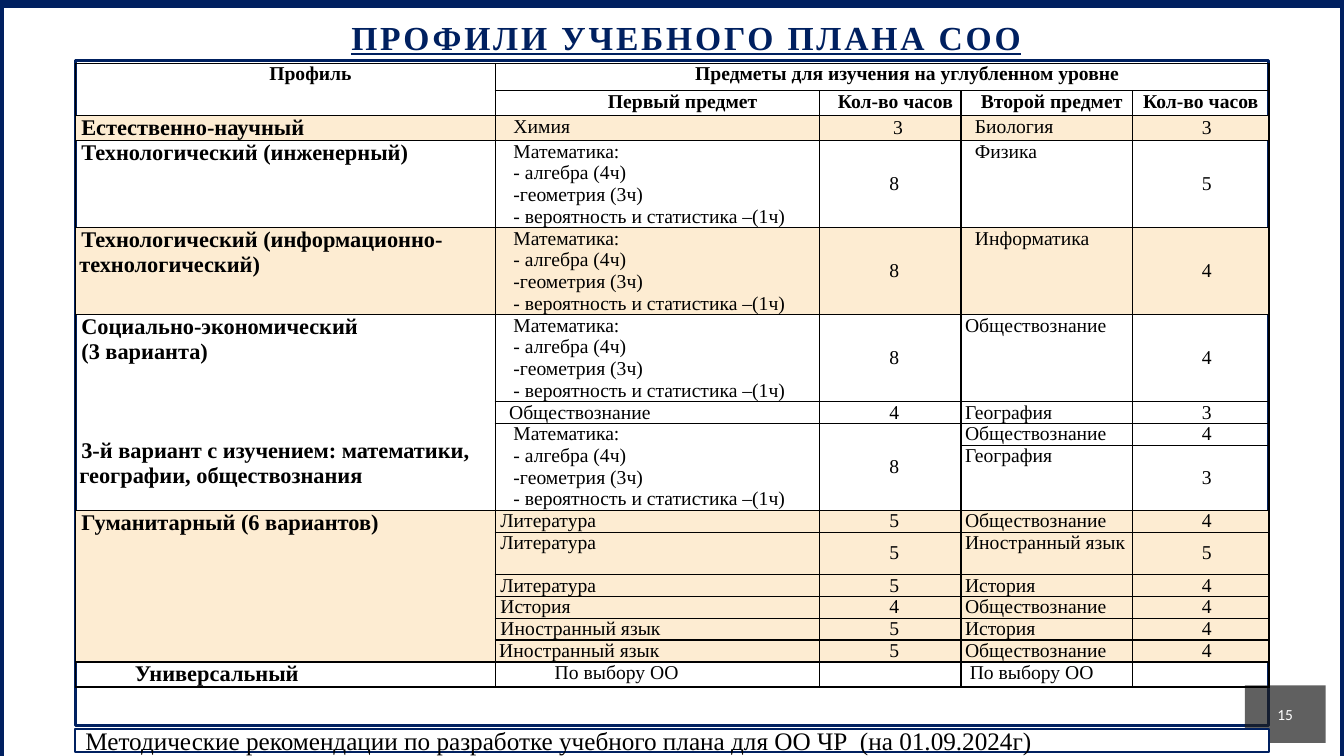
"""Builds the slide listing the upper-secondary curriculum profiles."""
from lxml.etree import SubElement
from pptx import Presentation
from pptx.dml.color import RGBColor
from pptx.enum.shapes import MSO_SHAPE
from pptx.enum.text import MSO_ANCHOR, MSO_AUTO_SIZE, PP_ALIGN
from pptx.oxml.ns import qn
from pptx.util import Cm, Pt

NAVY, WHITE, BLACK, CREAM = "002060", "FFFFFF", "000000", "FDECD2"
SERIF = "Times New Roman"
LEFT, CENTER = PP_ALIGN.LEFT, PP_ALIGN.CENTER


def color(hex_value):
    return RGBColor.from_string(hex_value)


def write(frame, text, size, bold=False, align=LEFT, indent=0, ink=BLACK, font=SERIF):
    frame.text = text
    for paragraph in frame.paragraphs:
        paragraph.alignment = align
        paragraph._p.get_or_add_pPr().set("indent", str(Cm(indent)))
        for run in paragraph.runs:
            run.font.name, run.font.size, run.font.bold = font, Pt(size), bold
            run.font.color.rgb = color(ink)


prs = Presentation()
prs.slide_width, prs.slide_height = Cm(33.87), Cm(19.05)
slide = prs.slides.add_slide(prs.slide_layouts[5])
slide.background.fill.solid()
slide.background.fill.fore_color.rgb = color("F2F2F2")

panels = []
for left, top, width, height, fill, line_width in [
    (0, 0.1, 33.87, 19.05, WHITE, 6),
    (1.9, 1.52, 30.08, 16.77, WHITE, 2.25),
    (31.37, 17.27, 2.04, 1.45, "1D1D1D", 0),
    (1.9, 18.36, 30.08, 0.59, WHITE, 1.5),
]:
    panel = slide.shapes.add_shape(MSO_SHAPE.RECTANGLE, Cm(left), Cm(top), Cm(width), Cm(height))
    panel.shadow.inherit = False
    panel.fill.solid()
    panel.fill.fore_color.rgb = color(fill)
    if line_width:
        panel.line.color.rgb = color(NAVY)
        panel.line.width = Pt(line_width)
    else:
        panel.line.fill.background()
    panels.append(panel)
page, table_frame, page_number, source_note = panels

heading = slide.shapes.title
table_frame._element.addnext(heading._element)
heading.left, heading.top, heading.width, heading.height = Cm(1.52), Cm(0.28), Cm(31.55), Cm(0.89)
heading.fill.solid()
heading.fill.fore_color.rgb = color(WHITE)
heading_text = heading.text_frame
write(heading_text, "ПРОФИЛИ УЧЕБНОГО ПЛАНА СОО", 24, True, CENTER, ink=NAVY)
heading_text.auto_size = MSO_AUTO_SIZE.NONE
heading_text.vertical_anchor = MSO_ANCHOR.TOP
heading_text.margin_left = heading_text.margin_right = Cm(0.25)
heading_text.margin_top = heading_text.margin_bottom = Cm(0.25)
heading_text.paragraphs[0].line_spacing = 0.9
heading_font = heading_text.paragraphs[0].runs[0].font
heading_font.underline = True
heading_font._element.set("spc", "200")

write(page_number.text_frame, "15", 11, align=CENTER, ink=WHITE, font="Calibri")
opacity = SubElement(page_number.fill._xPr.find(qn("a:solidFill"))[0], qn("a:alpha"))
opacity.set("val", "70000")
write(source_note.text_frame,
      "Методические рекомендации по разработке учебного плана для ОО ЧР  (на 01.09.2024г)", 18)

MATH = "Математика:\n- алгебра (4ч)\n-геометрия (3ч)\n- вероятность и статистика –(1ч)"
column_widths = [10.58, 8.18, 3.56, 4.32, 3.44]
row_heights = [0.69, 0.63, 0.63, 2.19, 2.19, 2.19, 0.55, 0.55, 1.64,
               0.55, 1.07, 0.55, 0.55, 0.55, 0.55, 0.63]
headers = [
    (0, 0, "Профиль", 1.27), (0, 1, "Предметы для изучения на углубленном уровне", 1.27),
    (1, 1, "Первый предмет", 1.27), (1, 2, "Кол-во часов", 0.25),
    (1, 3, "Второй предмет", 0.25), (1, 4, "Кол-во часов", 0),
]
profiles = [
    (2, "Естественно-научный", 0.05), (3, "Технологический (инженерный)", 0.05),
    (4, "Технологический (информационно-технологический)", 0.05),
    (5, "Социально-экономический\n(3 варианта)\n"
        "3-й вариант с изучением: математики, географии, обществознания", 0.05),
    (9, "Гуманитарный (6 вариантов)", 0.05), (15, "Универсальный", 1.4),
]
subjects = [
    ("Химия", 0.36, "3", "Биология", 0.25, "3"),
    (MATH, 0.36, "8", "Физика", 0.25, "5"),
    (MATH, 0.36, "8", "Информатика", 0.25, "4"),
    (MATH, 0.36, "8", "Обществознание", 0, "4"),
    ("Обществознание", 0.25, "4", "География", 0, "3"),
    (MATH, 0.36, "8", "Обществознание", 0, "4"),
    ("", 0, "", "География", 0, "3"),
    ("Литература", 0.03, "5", "Обществознание", 0, "4"),
    ("Литература", 0.03, "5", "Иностранный язык", 0, "5"),
    ("Литература", 0.03, "5", "История", 0, "4"),
    ("История", 0.03, "4", "Обществознание", 0, "4"),
    ("Иностранный язык", 0.03, "5", "История", 0, "4"),
    ("Иностранный язык", 0, "5", "Обществознание", 0, "4"),
    ("По выбору ОО", 1.4, "", "По выбору ОО", 0.12, ""),
]
cream_rows = {2, 4, *range(9, 15)}

curriculum_frame = slide.shapes.add_table(len(row_heights), len(column_widths), Cm(1.9), Cm(1.6),
                                          Cm(sum(column_widths)), Cm(sum(row_heights)))
source_note._element.addprevious(curriculum_frame._element)
curriculum = curriculum_frame.table
curriculum.first_row = curriculum.horz_banding = False
for column, width in zip(curriculum.columns, column_widths):
    column.width = Cm(width)
for row, height in zip(curriculum.rows, row_heights):
    row.height = Cm(height)

for row, column, text, indent in headers:
    write(curriculum.cell(row, column).text_frame, text, 14, True, CENTER, indent)
for row, text, indent in profiles:
    write(curriculum.cell(row, 0).text_frame, text, 16, True, LEFT, indent)
curriculum.cell(5, 0).text_frame.paragraphs[2].space_before = Pt(53)
for row, (first, first_indent, first_hours, second, second_indent, second_hours) in enumerate(subjects, 2):
    hours_indent = 0.38 if row == 2 else 0.2
    for column, text, align, indent in [
        (1, first, LEFT, first_indent), (2, first_hours, CENTER, hours_indent),
        (3, second, LEFT, second_indent), (4, second_hours, CENTER, 0.3),
    ]:
        cell = curriculum.cell(row, column)
        write(cell.text_frame, text, 14, False, align, indent)
        if align == CENTER:
            cell.vertical_anchor = MSO_ANCHOR.MIDDLE

for row in range(len(row_heights)):
    for column in range(len(column_widths)):
        cell = curriculum.cell(row, column)
        cell.margin_left = cell.margin_right = Cm(0.1)
        cell.margin_top = cell.margin_bottom = 0
        for side in ("lnL", "lnR", "lnT", "lnB"):
            border = SubElement(cell._tc.get_or_add_tcPr(), qn(f"a:{side}"), w=str(Pt(1)))
            SubElement(SubElement(border, qn("a:solidFill")), qn("a:srgbClr"), val=BLACK)
        if row in cream_rows:
            cell.fill.solid()
            cell.fill.fore_color.rgb = color(CREAM)
        else:
            cell.fill.background()
        if not cell.text_frame.text:
            SubElement(cell.text_frame.paragraphs[0]._p, qn("a:endParaRPr"), sz="1000")

for top, left, bottom, right in [(0, 0, 1, 0), (0, 1, 0, 4), (5, 0, 8, 0),
                                 (7, 1, 8, 1), (7, 2, 8, 2), (9, 0, 14, 0)]:
    curriculum.cell(top, left).merge(curriculum.cell(bottom, right))

prs.save("out.pptx")
